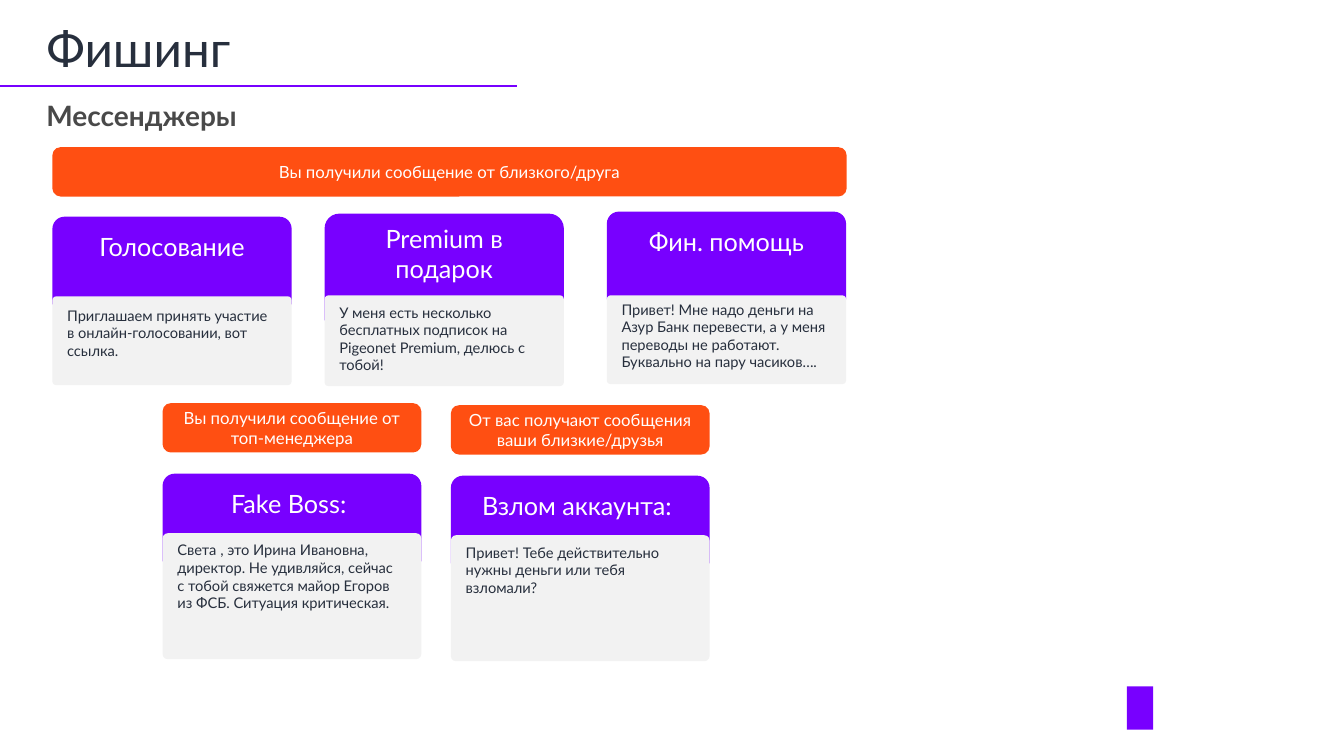
from lxml import etree
from pptx import Presentation, util as u
from pptx.dml.color import RGBColor
from pptx.enum import shapes, text
from pptx.oxml.ns import qn

VIOLET, ORANGE, GREY = "7800FF", "FF4F12", "F2F2F2"
INK, SUBTITLE, WHITE = "272F3D", "494949", "FFFFFF"
SHAPE = shapes.MSO_SHAPE


def color(value):
    return RGBColor.from_string(value)


class SlideBuilder:
    """Style and current slide; all lengths are percentages of the slide's size."""
    font = "Lato"

    def __init__(self, presentation):
        self.width = presentation.slide_width
        self.height = presentation.slide_height
        self.slide = presentation.slides.add_slide(presentation.slide_layouts[6])

    def box(self, left, top, width, height):
        return (round(self.width * left / 100), round(self.height * top / 100),
                round(self.width * width / 100), round(self.height * height / 100))

    def set_text(self, frame, content, size, ink, align=text.PP_ALIGN.LEFT, bold=False):
        frame.word_wrap = True
        frame.text = content
        paragraph = frame.paragraphs[0]
        paragraph.alignment = align
        font = paragraph.font
        font.name, font.size, font.bold = self.font, u.Pt(size), bold
        font.color.rgb = color(ink)
        return paragraph

    def label(self, place, content, size, ink, bold=False):
        frame = self.slide.shapes.add_textbox(*self.box(*place)).text_frame
        frame.margin_left = frame.margin_right = 0
        frame.margin_top = frame.margin_bottom = 0
        return self.set_text(frame, content, size, ink, bold=bold)

    def block(self, place, fill, kind=SHAPE.ROUNDED_RECTANGLE, corners=()):
        shape = self.slide.shapes.add_shape(kind, *self.box(*place))
        shape.shadow.inherit = False
        shape.fill.solid()
        shape.fill.fore_color.rgb = color(fill)
        shape.line.fill.background()
        for index, corner in enumerate(corners):
            shape.adjustments[index] = corner
        return shape

    def banner(self, place, content):
        frame = self.block(place, ORANGE).text_frame
        frame.vertical_anchor = text.MSO_ANCHOR.MIDDLE
        self.set_text(frame, content, 12, WHITE, text.PP_ALIGN.CENTER)

    def card(self, left, width, header, body, message, heading, content):
        """header, body and message are (top, height) pairs."""
        frame = self.block((left, header[0], width, header[1]), VIOLET,
                           SHAPE.ROUND_2_SAME_RECTANGLE, (0.137, 0)).text_frame
        frame.vertical_anchor = text.MSO_ANCHOR.MIDDLE
        frame.margin_left = frame.margin_right = u.Inches(0.05)
        frame.margin_top, frame.margin_bottom = 0, u.Inches(0.31)
        self.set_text(frame, heading, 18, WHITE, text.PP_ALIGN.CENTER)
        self.block((left, body[0], width, body[1]), GREY, corners=(0.042,))
        inset = 1.1
        paragraph = self.label((left + inset, message[0], width - 2 * inset, message[1]),
                               content, 10.5, INK)
        paragraph.space_after = u.Pt(12)

    def rule(self, top, width):
        left, y, length, _ = self.box(0, top, width, 0)
        line = self.slide.shapes.add_connector(
            shapes.MSO_CONNECTOR.STRAIGHT, left, y, left + length, y)
        line.line.color.rgb = color("7700FF")
        line.line.width = u.Pt(1.5)
        etree.SubElement(line._element.spPr, qn("a:effectLst"))


def main():
    presentation = Presentation()
    presentation.slide_width, presentation.slide_height = u.Inches(13.33), u.Inches(7.5)
    builder = SlideBuilder(presentation)

    # Plain mark in the lower right corner
    builder.block((83.85, 90.8, 1.95, 5.73), VIOLET, SHAPE.RECTANGLE)

    # Title, rule and subtitle
    title = builder.label((3.45, 3.33, 86.93, 7.87), "Фишинг", 35.3, INK)
    title.line_spacing = u.Pt(37)
    builder.rule(11.33, 38.5)
    builder.label((3.45, 13.07, 35.7, 4.53), "Мессенджеры", 20, SUBTITLE, bold=True)

    # Upper group: one banner over three cards
    builder.banner((3.9, 19.47, 59.1, 6.53), "Вы получили сообщение от близкого/друга")
    upper_cards = [
        (3.9, (28.67, 11.6), (39.2, 11.73), (40.53, 7.07), "Голосование",
         "Приглашаем принять участие \vв онлайн-голосовании, вот ссылка."),
        (24.15, (28.27, 14.13), (39.07, 12), (40.13, 9.47), "Premium в подарок",
         "У меня есть несколько бесплатных подписок на Pigeonet Premium, делюсь с тобой!"),
        (45.15, (28, 11.6), (39.07, 11.73), (39.73, 9.47), "Фин. помощь",
         "Привет! Мне надо деньги на Азур Банк перевести, а у меня переводы не работают. "
         "Буквально на пару часиков…."),
    ]
    for left, *card in upper_cards:
        builder.card(left, 17.8, *card)

    # Lower group: each card has its own banner
    lower_cards = [
        (12.1, 53.33, 9.47, "Вы получили сообщение от топ-менеджера", "Fake Boss: ",
         "Света , это Ирина Ивановна, директор. Не удивляйся, сейчас "
         "\vс тобой свяжется майор Егоров из ФСБ. Ситуация критическая."),
        (33.55, 53.6, 7.07, "От вас получают сообщения ваши близкие/друзья",
         "Взлом аккаунта: ", "Привет! Тебе действительно нужны деньги или тебя взломали?"),
    ]
    for left, top, message_height, banner, heading, content in lower_cards:
        builder.card(left, 19.25, (top + 9.33, 11.6), (top + 17.2, 16.67),
                     (top + 18.27, message_height), heading, content)
        builder.banner((left, top, 19.25, 6.53), banner)

    presentation.save("out.pptx")


if __name__ == "__main__":
    main()
